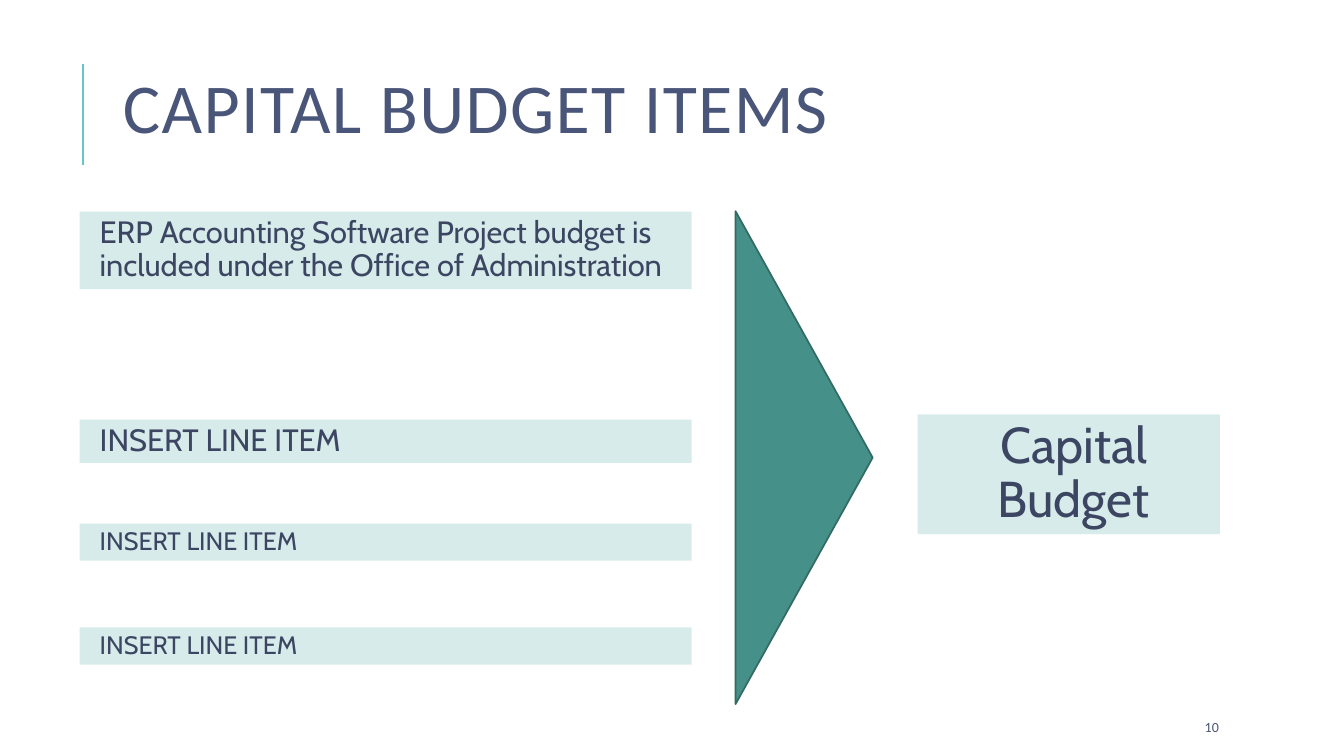
"""Build the capital budget items slide."""
import lxml.etree
import pptx
import pptx.dml.color
import pptx.enum.shapes
import pptx.enum.text
import pptx.oxml.ns
import pptx.util

RGBColor = pptx.dml.color.RGBColor
Pt = pptx.util.Pt
SHAPE = pptx.enum.shapes.MSO_SHAPE
ALIGN = pptx.enum.text.PP_ALIGN
ANCHOR = pptx.enum.text.MSO_ANCHOR
AUTO_SIZE = pptx.enum.text.MSO_AUTO_SIZE

NAVY = RGBColor(0x49, 0x55, 0x79)
INK = RGBColor(0x3C, 0x46, 0x63)
AQUA = RGBColor(0x62, 0xC7, 0xCD)
MINT = RGBColor(0xD7, 0xEC, 0xEA)
TEAL = RGBColor(0x45, 0x90, 0x88)
DARK_TEAL = RGBColor(0x33, 0x6B, 0x65)

WIDTH = pptx.util.Inches(13.33)
HEIGHT = pptx.util.Inches(7.5)
ITEM_LEFT, ITEM_WIDTH = 5.93, 45.54
ITEM_TOP, ITEM_PITCH = 28, 13.75
ITEMS = [
    (0, 10.27, 22, "ERP Accounting Software Project budget is included under the Office of Administration"),
    (2, 5.73, 22, "INSERT LINE ITEM"),
    (3, 4.93, 18, "INSERT LINE ITEM"),
    (4, 4.93, 18, "INSERT LINE ITEM"),
]


def share(left, top, width, height):
    """Turn percentages of the slide size into lengths."""
    return (int(WIDTH * left / 100), int(HEIGHT * top / 100),
            int(WIDTH * width / 100), int(HEIGHT * height / 100))


def apply(obj, values):
    """Set attributes from a dict of format values."""
    for name, value in values.items():
        setattr(obj, name, value)


def write(sp, text, size, font, color, frame=None, para=None):
    """Write one formatted paragraph and return it with its run."""
    tf = sp.text_frame
    apply(tf, {"word_wrap": True, "auto_size": AUTO_SIZE.NONE, **(frame or {})})
    p = tf.paragraphs[0]
    apply(p, para or {})
    r = p.add_run()
    r.text = text
    apply(r.font, {"size": Pt(size), "name": font})
    r.font.color.rgb = color
    return p, r


def add_title(s, text):
    """Fill the title placeholder."""
    sp = s.shapes.title
    apply(sp, dict(zip(("left", "top", "width", "height"), share(8.4, 4, 82, 21.87))))
    _, r = write(sp, text, 50, "Calibri", NAVY,
                 {"vertical_anchor": ANCHOR.MIDDLE},
                 {"alignment": ALIGN.LEFT, "line_spacing": 0.8})
    r._r.get_or_add_rPr().set("spc", "100")


def add_title_rule(s):
    """Draw the upright rule beside the title."""
    x, y, _, height = share(6.15, 8.53, 0, 13.34)
    line = s.shapes.add_connector(pptx.enum.shapes.MSO_CONNECTOR.STRAIGHT, x, y + height, x, y)
    line.line.color.rgb = AQUA
    line.line.width = Pt(1.5)
    lxml.etree.SubElement(line._element.spPr, pptx.oxml.ns.qn("a:effectLst"))


def add_shape(s, kind, box, fill):
    """Add a filled preset shape without outline or shadow."""
    sp = s.shapes.add_shape(kind, *share(*box))
    sp.shadow.inherit = False
    sp.fill.solid()
    sp.fill.fore_color.rgb = fill
    sp.line.fill.background()
    return sp


def add_label(s, box, text, size, align=ALIGN.LEFT, anchor=ANCHOR.TOP):
    """Add a mint box holding indented text."""
    sp = add_shape(s, SHAPE.RECTANGLE, box, MINT)
    p, _ = write(sp, text, size, "Cabin", INK, {"vertical_anchor": anchor},
                 {"alignment": align, "line_spacing": 0.9, "space_before": Pt(1)})
    p._p.get_or_add_pPr().set("marL", str(pptx.util.Inches(0.1)))


def add_arrow(s):
    """Add the triangle that points from the items to the budget."""
    sp = add_shape(s, SHAPE.ISOSCELES_TRIANGLE, (41.49, 51.47, 36.68, 18.13), TEAL)
    sp.rotation = 90
    sp.line.color.rgb = DARK_TEAL
    sp.line.width = Pt(1.25)


def add_page_number(s, number):
    """Add the page number."""
    sp = s.shapes.add_textbox(*share(88.9, 94.4, 7.95, 4))
    write(sp, number, 10, "Calibri", NAVY)


def main():
    """Build and save the slide."""
    prs = pptx.Presentation()
    prs.slide_width, prs.slide_height = WIDTH, HEIGHT
    s = prs.slides.add_slide(prs.slide_layouts.get_by_name("Title Only"))
    add_title_rule(s)
    add_title(s, "CAPITAL BUDGET ITEMS")
    add_page_number(s, "10")
    add_label(s, (68.27, 54.8, 22.5, 15.87), "Capital Budget", 36, ALIGN.CENTER, ANCHOR.MIDDLE)
    add_arrow(s)
    for row, height, size, text in ITEMS:
        add_label(s, (ITEM_LEFT, ITEM_TOP + row * ITEM_PITCH, ITEM_WIDTH, height), text, size)
    prs.save("out.pptx")


if __name__ == "__main__":
    main()
